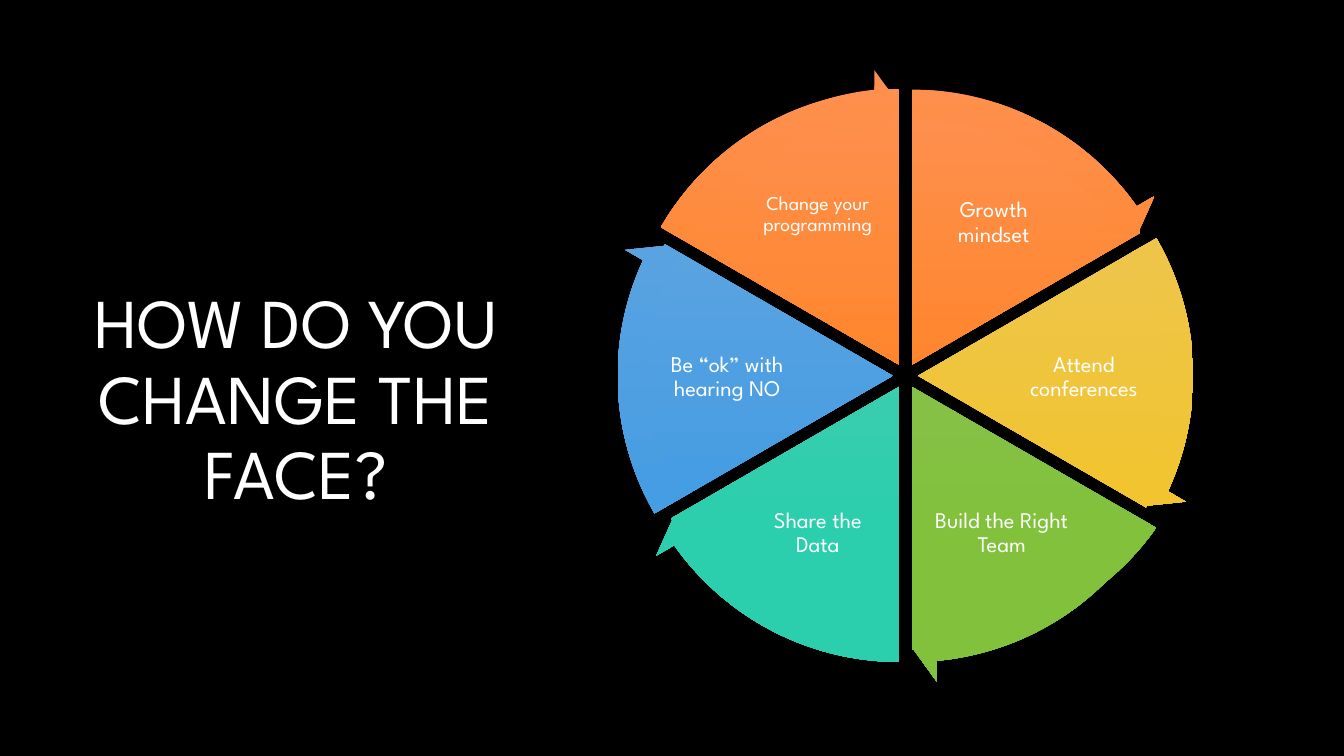
import math

import pptx
import pptx.util
import pptx.dml.color
import pptx.enum.shapes
import pptx.enum.text

Cm = pptx.util.Cm
RGB = pptx.dml.color.RGBColor
KIND = pptx.enum.shapes.MSO_SHAPE

BLACK = RGB(0x00, 0x00, 0x00)
WHITE = RGB(0xFF, 0xFF, 0xFF)
ORANGE = RGB(0xFE, 0x90, 0x4F), RGB(0xFF, 0x80, 0x19)
YELLOW = RGB(0xEB, 0xC6, 0x59), RGB(0xF2, 0xC4, 0x2C)
GREEN = RGB(0x8F, 0xC1, 0x5E), RGB(0x81, 0xC1, 0x3C)
TEAL = RGB(0x55, 0xCC, 0xB1), RGB(0x2B, 0xCE, 0xAD)
BLUE = RGB(0x66, 0xA7, 0xE0), RGB(0x43, 0x9C, 0xE3)
FONT = "League Spartan"

# Lengths are centimetres
TITLE = "HOW DO YOU CHANGE THE FACE?"
TITLE_BOX = 1.91, 2.97, 11.1, 14.3
DISC = 13.26
# Clockwise from the top: text, size, label box, colours, slice width and height
SLICES = [
    ("Growth mindset", 16, (23.29, 4.27, 3.51, 2.69), ORANGE, (13.34, DISC)),
    ("Attend conferences", 16, (25.5, 8.2, 3.63, 2.62), YELLOW, (DISC, DISC)),
    ("Build the Right Team", 16, (23.34, 12.09, 3.81, 2.69), GREEN, (14.58, DISC)),
    ("Share the Data", 16, (18.87, 12.09, 3.48, 2.69), TEAL, (DISC, DISC)),
    ("Be “ok” with hearing NO", 16, (16.51, 8.2, 3.63, 2.62), BLUE, (DISC, DISC)),
    ("Change your programming", 14, (18.87, 4.01, 3.48, 2.82), ORANGE, (DISC, 13.92)),
]
MID = 22.82, 9.47
PUSH = 0.32
RING = 14.91
STEP = 360 / len(SLICES)
UNIT = 0.6  # adjustment value of one degree
BAND, TIP, HEAD = 0.05, 3.28, 0.06

deck = pptx.Presentation()
deck.slide_width, deck.slide_height = Cm(33.87), Cm(19.05)
slide = deck.slides.add_slide(deck.slide_layouts[6])
slide.background.fill.solid()
slide.background.fill.fore_color.rgb = BLACK


def write(text, box, size, inset=None):
    frame = slide.shapes.add_textbox(*map(Cm, box)).text_frame
    frame.word_wrap = True
    frame.vertical_anchor = pptx.enum.text.MSO_ANCHOR.MIDDLE
    if inset is not None:
        frame.margin_left = frame.margin_right = Cm(inset)
        frame.margin_top = frame.margin_bottom = Cm(inset)
    para = frame.paragraphs[0]
    para.alignment = pptx.enum.text.PP_ALIGN.CENTER
    para.line_spacing = 0.9
    run = para.add_run()
    run.text = text
    run.font.name = FONT
    run.font.size = pptx.util.Pt(size)
    run.font.color.rgb = WHITE


def draw(kind, slot, width, height, tones, adjust):
    """Place a shape on the slot's centre, pushed outward from the middle."""
    angle = math.radians((slot + 0.5) * STEP - 90)
    left = MID[0] + PUSH * math.cos(angle) - width / 2
    top = MID[1] + PUSH * math.sin(angle) - height / 2
    shape = slide.shapes.add_shape(kind, Cm(left), Cm(top), Cm(width), Cm(height))
    shape.shadow.inherit = False
    shape.line.fill.background()
    shape.fill.gradient()
    shape.fill.gradient_angle = 270
    for stop, place, tone in zip(shape.fill.gradient_stops, (0, 0.78), tones):
        stop.position = place
        stop.color.rgb = tone
    for i, value in enumerate(adjust):
        shape.adjustments[i] = value


def span(slot):
    """Start and end of a slot as adjustment values."""
    return [(270 + STEP * n) % 360 * UNIT for n in (slot, slot + 1)]


write(TITLE, TITLE_BOX, 50)
for slot, (text, size, box, tones, (width, height)) in enumerate(SLICES):
    draw(KIND.PIE, slot, width, height, tones, span(slot))
    write(text, box, size, inset=0.05)
for slot, (_, _, _, tones, _) in enumerate(SLICES):
    start, end = span(slot)
    draw(KIND.CIRCULAR_ARROW, slot, RING, RING, tones,
         (BAND, TIP, end - TIP, start, HEAD))

deck.save("out.pptx")
